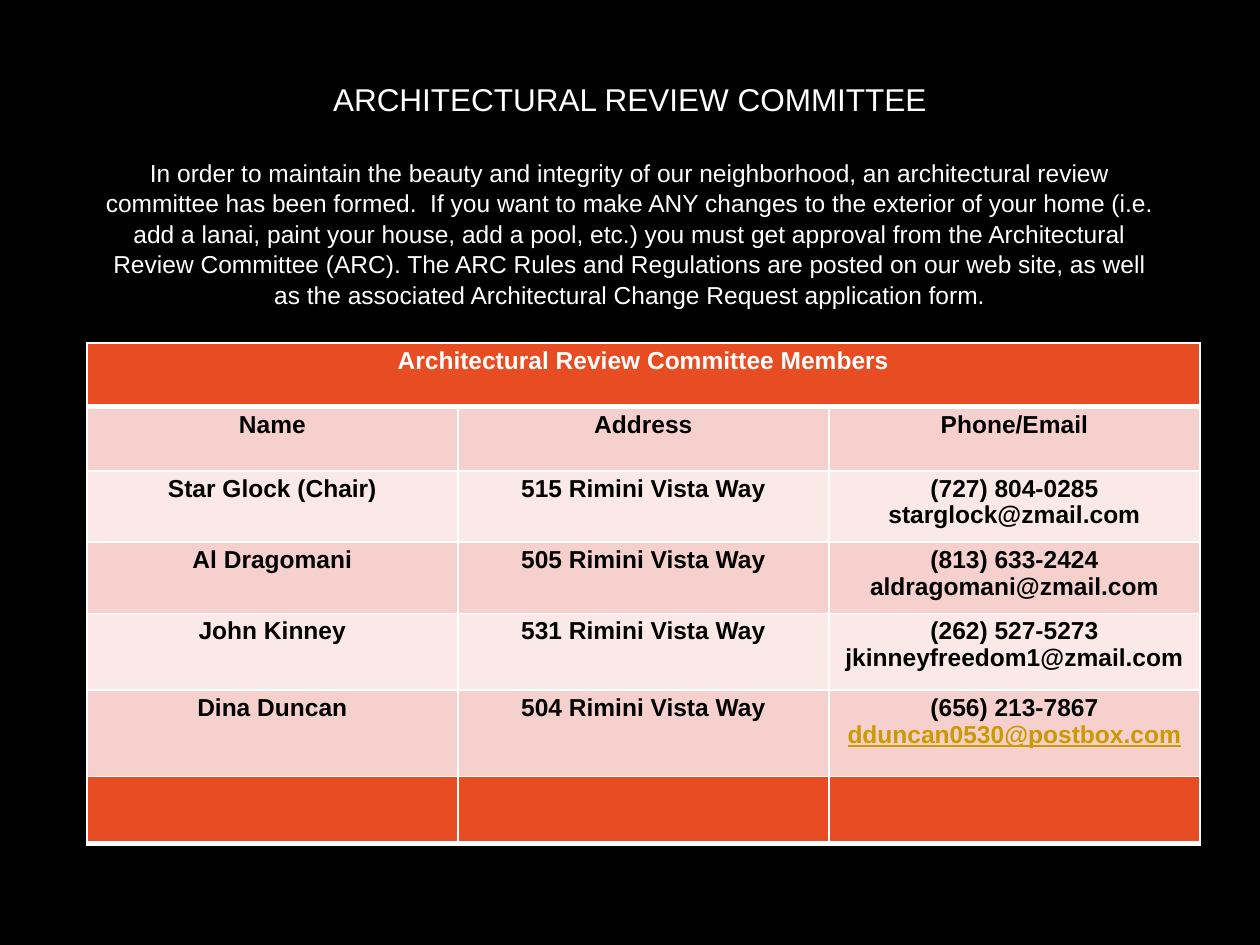
"""Build the review committee slide with its table of members."""
import dataclasses
import typing

import lxml.etree
import pptx
import pptx.dml.color
import pptx.enum.text
import pptx.oxml.ns
import pptx.util

Cm = pptx.util.Cm
Pt = pptx.util.Pt
RGB = pptx.dml.color.RGBColor.from_string


@dataclasses.dataclass(frozen=True)
class Theme:
    font: str = "Arial"
    black: str = "000000"
    white: str = "FFFFFF"
    orange: str = "E84C22"
    rose: str = "F6D0CD"
    blush: str = "FBE9E8"
    gold: str = "CC9900"
    title: int = 18
    body: int = 14
    thin: int = 1
    thick: int = 3


@dataclasses.dataclass(frozen=True)
class Row:
    height: float
    fill: str
    texts: tuple[str, ...] = ("", "", "")
    color: str = "000000"
    top: int = 1
    base: int = 1
    merge: bool = False
    link: str = ""


THEME = Theme()
LEFT, COLUMN = 1.75, 7.48
TITLE = "ARCHITECTURAL REVIEW COMMITTEE"
INTRO = (
    "In order to maintain the beauty and integrity of our neighborhood, an "
    "architectural review committee has been formed.  If you want to make ANY "
    "changes to the exterior of your home (i.e. add a lanai, paint your house, "
    "add a pool, etc.) you must get approval from the Architectural Review "
    "Committee (ARC). The ARC Rules and Regulations are posted on our web site, "
    "as well as the associated Architectural Change Request application form."
)
MEMBERS = (
    Row(1.29, THEME.orange, ("Architectural Review Committee Members", "", ""),
        color=THEME.white, base=THEME.thick, merge=True),
    Row(1.29, THEME.rose, ("Name", "Address", "Phone/Email"), top=THEME.thick),
    Row(1.44, THEME.blush, ("Star Glock (Chair)", "515 Rimini Vista Way",
                            "(727) 804-0285\nstarglock@zmail.com")),
    Row(1.44, THEME.rose, ("Al Dragomani", "505 Rimini Vista Way",
                           "(813) 633-2424\naldragomani@zmail.com")),
    Row(1.54, THEME.blush, ("John Kinney", "531 Rimini Vista Way",
                            "(262) 527-5273\njkinneyfreedom1@zmail.com")),
    Row(1.74, THEME.rose, ("Dina Duncan", "504 Rimini Vista Way",
                           "(656) 213-7867\ndduncan0530@postbox.com"),
        link="dduncan0530@postbox.com"),
)
FOOTER = (Row(1.35, THEME.orange, base=THEME.thick),)


def write(frame: typing.Any, text: str, *, size: int = THEME.body,
          color: str = THEME.white, bold: bool = False, under: bool = False,
          before: float = 0, spacing: float = 1, fresh: bool = False) -> None:
    """Write one centred paragraph into the frame."""
    para = frame.add_paragraph() if fresh else frame.paragraphs[0]
    para.alignment = pptx.enum.text.PP_ALIGN.CENTER
    para.line_spacing = spacing
    if before:
        para.space_before = Pt(before)
    run = para.add_run()
    run.text = text
    font = run.font
    font.name, font.size = THEME.font, Pt(size)
    font.bold, font.underline = bold, under
    font.color.rgb = RGB(color)


def border(cell: typing.Any, row: Row) -> None:
    """Draw the white lines on the four sides of a cell."""
    props = cell._tc.get_or_add_tcPr()
    sides = {"L": THEME.thin, "R": THEME.thin, "T": row.top, "B": row.base}
    for side, width in sides.items():
        line = lxml.etree.SubElement(
            props, pptx.oxml.ns.qn(f"a:ln{side}"), w=str(Pt(width)))
        fill = lxml.etree.SubElement(line, pptx.oxml.ns.qn("a:solidFill"))
        lxml.etree.SubElement(
            fill, pptx.oxml.ns.qn("a:srgbClr"), val=THEME.white)


def fill_cell(cell: typing.Any, row: Row, text: str) -> None:
    """Give a cell its margins, lines, fill and text."""
    cell.margin_left = cell.margin_right = Cm(0.18)
    cell.margin_top = cell.margin_bottom = Cm(0.1)
    border(cell, row)
    cell.fill.solid()
    cell.fill.fore_color.rgb = RGB(row.fill)
    for index, line in enumerate(text.splitlines()):
        linked = line == row.link
        write(cell.text_frame, line, color=THEME.gold if linked else row.color,
              bold=True, under=linked, spacing=0.97, fresh=index > 0)


def add_grid(slide: typing.Any, top: float, rows: tuple[Row, ...]) -> None:
    """Add a table with three equal columns."""
    count = len(rows[0].texts)
    height = sum(row.height for row in rows)
    table = slide.shapes.add_table(
        len(rows), count, Cm(LEFT), Cm(top), Cm(COLUMN * count), Cm(height)
    ).table
    table.first_row = table.horz_banding = False
    for column in table.columns:
        column.width = Cm(COLUMN)
    for index, row in enumerate(rows):
        table.rows[index].height = Cm(row.height)
        for place, text in enumerate(row.texts):
            fill_cell(table.cell(index, place), row, text)
        if row.merge:
            table.cell(index, 0).merge(table.cell(index, count - 1))


def add_intro(slide: typing.Any) -> None:
    """Add the title and the text below it."""
    frame = slide.shapes.add_textbox(
        Cm(LEFT), Cm(0.94), Cm(21.9), Cm(5.97)).text_frame
    frame.word_wrap = True
    frame.vertical_anchor = pptx.enum.text.MSO_ANCHOR.MIDDLE
    write(frame, TITLE, size=THEME.title)
    write(frame, INTRO, before=22, spacing=1.04, fresh=True)


def main() -> None:
    """Build and save the deck."""
    deck = pptx.Presentation()
    deck.slide_width, deck.slide_height = Cm(25.4), Cm(19.05)
    slide = deck.slides.add_slide(deck.slide_layouts[6])
    slide.background.fill.solid()
    slide.background.fill.fore_color.rgb = RGB(THEME.black)
    top = 6.91
    add_grid(slide, top, MEMBERS)
    add_intro(slide)
    add_grid(slide, top + sum(row.height for row in MEMBERS), FOOTER)
    deck.save("out.pptx")


if __name__ == "__main__":
    main()
